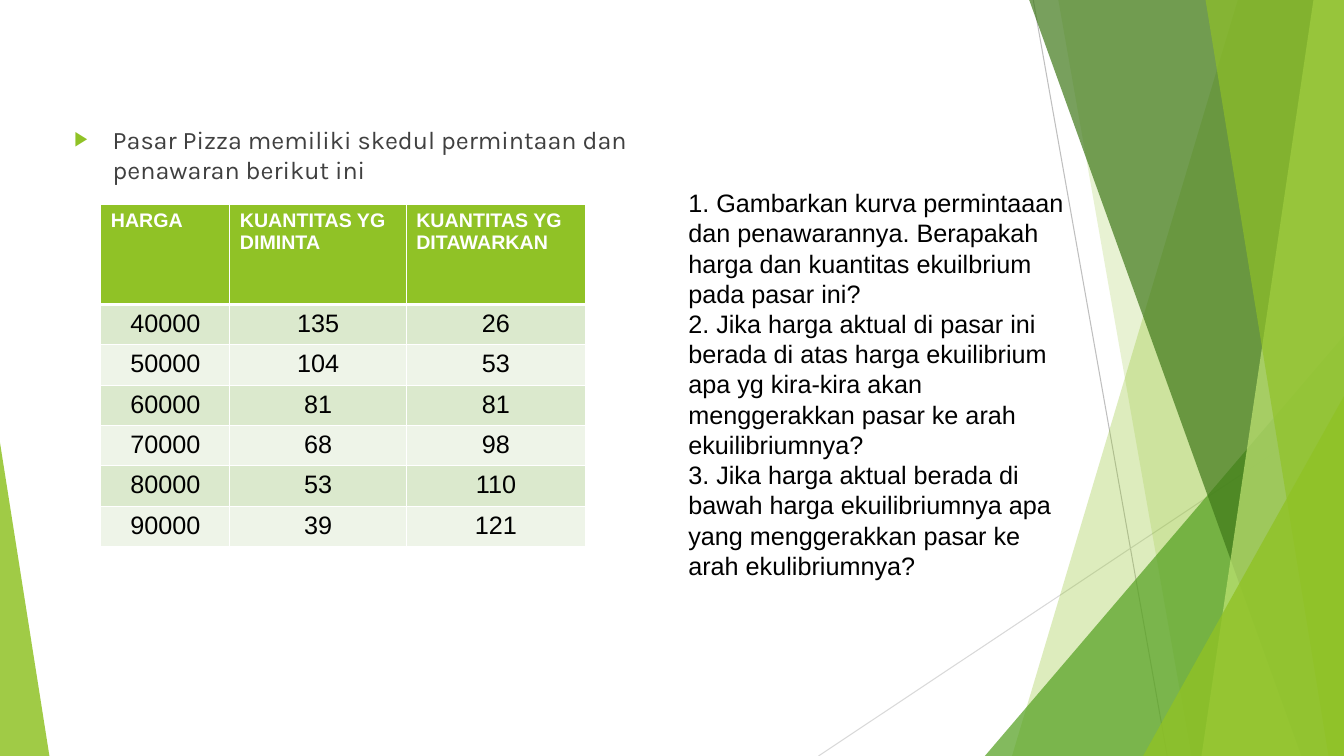
from dataclasses import dataclass

from lxml import etree
from pptx import Presentation
from pptx.dml.color import RGBColor
from pptx.enum.shapes import MSO_CONNECTOR, MSO_SHAPE
from pptx.enum.text import PP_ALIGN
from pptx.oxml.ns import qn
from pptx.util import Inches, Pt

STRAIGHT = MSO_CONNECTOR.STRAIGHT
TRIANGLE = MSO_SHAPE.ISOSCELES_TRIANGLE
LEFT, CENTER = PP_ALIGN.LEFT, PP_ALIGN.CENTER
SLIDE_WIDTH, SLIDE_HEIGHT = Inches(13.333), Inches(7.5)


@dataclass(frozen=True)
class Theme:
    lime: str = "90C226"
    leaf: str = "54A021"
    forest: str = "3F7819"
    pale: str = "C0E474"
    silver: str = "BFBFBF"
    mist: str = "D9D9D9"
    white: str = "FFFFFF"
    black: str = "000000"
    charcoal: str = "404040"
    stripes: tuple[str, str] = ("DBE9CD", "EEF4E8")
    sans: str = "Arial"
    lead: str = "Karla"
    header_size: int = 14
    body_size: int = 18


THEME = Theme()


@dataclass(frozen=True)
class Ray:
    start: tuple[float, float]
    end: tuple[float, float]
    color: str


@dataclass(frozen=True)
class Band:
    """A full-height facet from a slanted left edge to the slide's right side."""
    top: float
    bottom: float
    color: str
    opacity: int


@dataclass(frozen=True)
class Wedge:
    """A right triangle standing on the slide's bottom; apex 0 is left, 1 right."""
    left: float
    top: float
    width: float
    apex: int
    color: str
    opacity: int


@dataclass(frozen=True)
class Area:
    left: float
    top: float
    width: float
    height: float


# Positions are percentages of the slide's width and height.
BACKDROP = (
    Ray((76.88, 0), (86.85, 100), THEME.silver),
    Ray((100, 53.73), (60.9, 100), THEME.mist),
    Band(92.1, 75.3, THEME.lime, 30),
    Band(78.75, 88.65, THEME.lime, 20),
    Wedge(73.28, 44.4, 26.72, 1, THEME.leaf, 72),
    Band(76.58, 96.83, THEME.forest, 70),
    Band(97.73, 89.4, THEME.pale, 70),
    Band(89.7, 98.85, THEME.lime, 65),
    Wedge(85.05, 52.4, 14.95, 1, THEME.lime, 80),
    Wedge(0, 58.53, 3.68, 0, THEME.lime, 85),
)
LEAD_AREA = Area(4.8, 15.73, 48.6, 56.53)
QUESTION_AREA = Area(50.48, 24.13, 30.23, 53.87)
TABLE_LEFT, TABLE_TOP = 7.5, 27.07
COLUMN_WIDTHS = (9.6, 13.13, 13.35)
HEADER_HEIGHT, ROW_HEIGHT = 13.2, 5.33

LEAD = "Pasar Pizza memiliki skedul permintaan dan penawaran berikut ini"
SCHEDULE = (
    ("HARGA", "KUANTITAS YG DIMINTA", "KUANTITAS YG DITAWARKAN"),
    (40000, 135, 26),
    (50000, 104, 53),
    (60000, 81, 81),
    (70000, 68, 98),
    (80000, 53, 110),
    (90000, 39, 121),
)
QUESTIONS = (
    "1. Gambarkan kurva permintaaan dan penawarannya. Berapakah harga dan "
    "kuantitas ekuilbrium pada pasar ini?",
    "2. Jika harga aktual di pasar ini berada di atas harga ekuilibrium apa yg "
    "kira-kira akan menggerakkan pasar ke arah ekuilibriumnya?",
    "3. Jika harga aktual berada di bawah harga ekuilibriumnya apa yang "
    "menggerakkan pasar ke arah ekulibriumnya?",
)


def across(share: float) -> int:
    return round(SLIDE_WIDTH * share / 100)


def down(share: float) -> int:
    return round(SLIDE_HEIGHT * share / 100)


def add_element(parent, tag: str, **attributes: str):
    return etree.SubElement(parent, qn(tag), attributes)


def paint(shape, color: str, opacity: int) -> None:
    shape.shadow.inherit = False
    shape.line.fill.background()
    shape.fill.solid()
    shape.fill.fore_color.rgb = RGBColor.from_string(color)
    tint = shape.element.spPr.find(qn("a:solidFill"))[0]
    add_element(tint, "a:alpha", val=str(opacity * 1000))


def draw_ray(page, ray: Ray) -> None:
    (x1, y1), (x2, y2) = ray.start, ray.end
    line = page.shapes.add_connector(
        STRAIGHT, across(x1), down(y1), across(x2), down(y2))
    line.line.color.rgb = RGBColor.from_string(ray.color)
    line.line.width = Pt(0.75)
    add_element(line.element.spPr, "a:effectLst")


def draw_band(page, band: Band) -> None:
    outline = page.shapes.build_freeform(across(band.top), 0)
    outline.add_line_segments([(SLIDE_WIDTH, 0), (SLIDE_WIDTH, SLIDE_HEIGHT),
                               (across(band.bottom), SLIDE_HEIGHT)])
    paint(outline.convert_to_shape(), band.color, band.opacity)


def draw_wedge(page, wedge: Wedge) -> None:
    shape = page.shapes.add_shape(
        TRIANGLE, across(wedge.left), down(wedge.top),
        across(wedge.width), down(100 - wedge.top))
    shape.adjustments[0] = wedge.apex
    paint(shape, wedge.color, wedge.opacity)


def write(para, text: str, size: int, color: str,
          face: str = THEME.sans, bold: bool = False) -> None:
    span = para.add_run()
    span.text = text
    for name, value in {"name": face, "size": Pt(size), "bold": bold}.items():
        setattr(span.font, name, value)
    span.font.color.rgb = RGBColor.from_string(color)


def add_text_frame(page, area: Area):
    box = page.shapes.add_textbox(across(area.left), down(area.top),
                                  across(area.width), down(area.height))
    box.text_frame.word_wrap = True
    return box.text_frame


def add_bullet(para) -> None:
    settings = para._p.get_or_add_pPr()
    indent = Inches(0.38)
    settings.set("marL", str(indent))
    settings.set("indent", str(-indent))
    add_element(add_element(settings, "a:buClr"), "a:srgbClr", val=THEME.lime)
    add_element(settings, "a:buSzPct", val="80000")
    add_element(settings, "a:buFont", typeface=THEME.sans)
    add_element(settings, "a:buChar", char="▶")


def add_border(cell, side: str, points: int) -> None:
    line = add_element(cell._tc.get_or_add_tcPr(), f"a:ln{side}", w=str(Pt(points)))
    add_element(add_element(line, "a:solidFill"), "a:srgbClr", val=THEME.white)


def add_schedule(page) -> None:
    rows, columns = len(SCHEDULE), len(COLUMN_WIDTHS)
    heights = (HEADER_HEIGHT,) + (ROW_HEIGHT,) * (rows - 1)
    table = page.shapes.add_table(
        rows, columns, across(TABLE_LEFT), down(TABLE_TOP),
        across(sum(COLUMN_WIDTHS)), down(sum(heights))).table
    for column, width in zip(table.columns, COLUMN_WIDTHS):
        column.width = across(width)
    for index, (row, height, values) in enumerate(zip(table.rows, heights, SCHEDULE)):
        row.height = down(height)
        header = index == 0
        fill = THEME.lime if header else THEME.stripes[(index - 1) % 2]
        size = THEME.header_size if header else THEME.body_size
        color = THEME.white if header else THEME.black
        widths = {"L": 1, "R": 1, "T": 3 if index == 1 else 1, "B": 3 if header else 1}
        for cell, value in zip(row.cells, values):
            for side, points in widths.items():
                add_border(cell, side, points)
            cell.fill.solid()
            cell.fill.fore_color.rgb = RGBColor.from_string(fill)
            para = cell.text_frame.paragraphs[0]
            para.alignment = LEFT if header else CENTER
            write(para, str(value), size, color, bold=header)


def main() -> None:
    deck = Presentation()
    deck.slide_width, deck.slide_height = SLIDE_WIDTH, SLIDE_HEIGHT
    page = deck.slides.add_slide(deck.slide_layouts[6])
    painters = {Ray: draw_ray, Band: draw_band, Wedge: draw_wedge}
    for piece in BACKDROP:
        painters[type(piece)](page, piece)

    lead = add_text_frame(page, LEAD_AREA).paragraphs[0]
    add_bullet(lead)
    write(lead, LEAD, THEME.body_size, THEME.charcoal, THEME.lead)
    add_schedule(page)
    frame = add_text_frame(page, QUESTION_AREA)
    for index, question in enumerate(QUESTIONS):
        para = frame.add_paragraph() if index else frame.paragraphs[0]
        write(para, question, THEME.body_size, THEME.black)
    deck.save("out.pptx")


if __name__ == "__main__":
    main()
